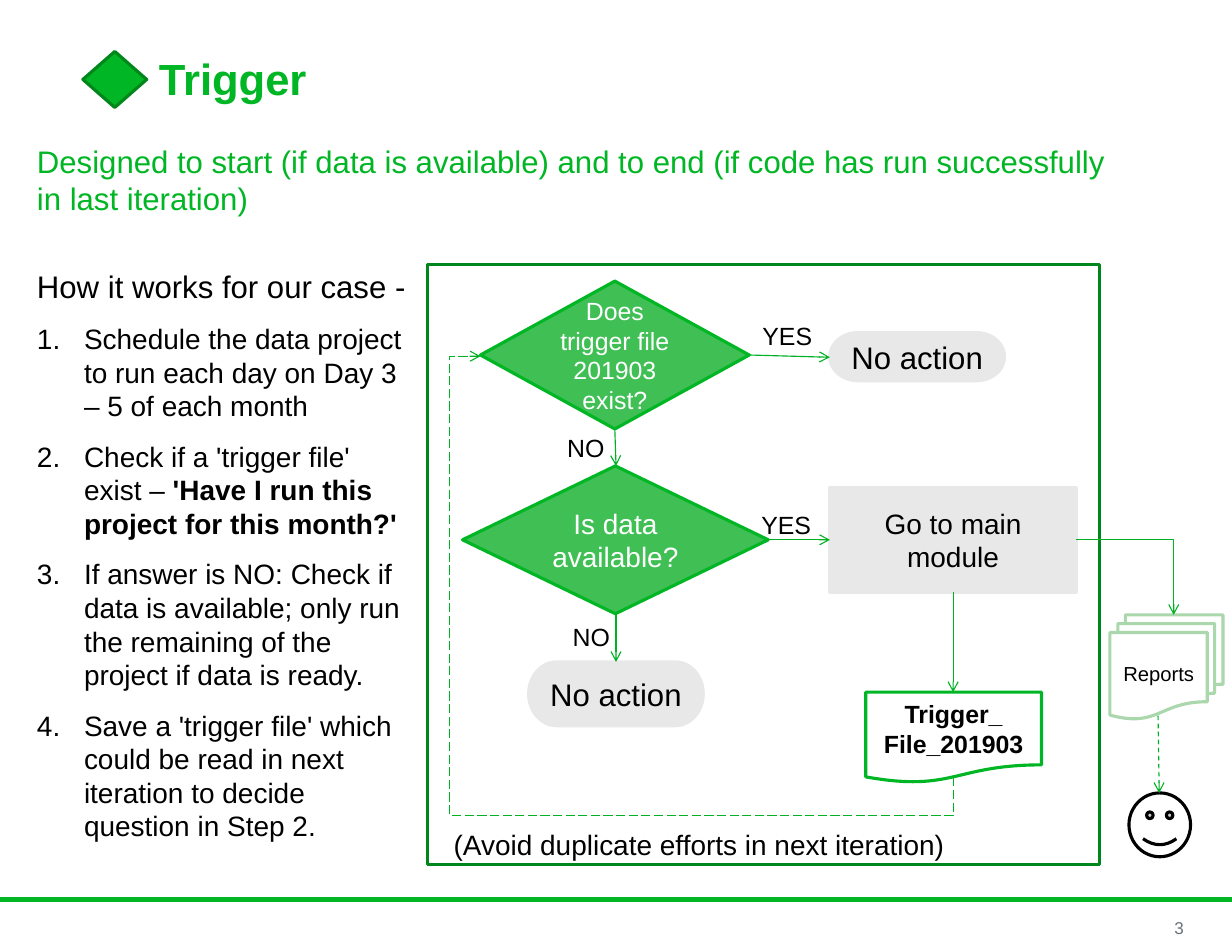
from lxml.etree import SubElement
from pptx import Presentation
from pptx.dml.color import RGBColor
from pptx.enum.dml import MSO_LINE_DASH_STYLE as Dash
from pptx.enum.shapes import MSO_CONNECTOR_TYPE as Link, MSO_SHAPE as Shape
from pptx.enum.text import MSO_ANCHOR as Anchor, PP_ALIGN as Align
from pptx.oxml.ns import qn
from pptx.util import Inches, Pt

GREEN, DARK_GREEN, PALE_GREEN = "00B624", "00871B", "AAD7AC"
ARROW_GREEN, DIAMOND_GREEN = "00B223", "3FBF54"
GREY, BLACK, WHITE = "E8E8E8", "000000", "FFFFFF"
STEPS = [
    [("Schedule the data project to run each day on Day 3 – 5 of each month", False)],
    [("Check if a 'trigger file' exist – ", False),
     ("'Have I run this project for this month?'", True)],
    [("If answer is NO: Check if data is available; only run the remaining "
      "of the project if data is ready.", False)],
    [("Save a 'trigger file' which could be read in next iteration to decide "
      "question in Step 2.", False)],
]


def color(value):
    return RGBColor.from_string(value)


def add_span(para, text, size=18, ink=BLACK, bold=False):
    span = para.add_run()
    span.text = text
    span.font.name = "Arial"
    span.font.size = Pt(size)
    span.font.bold = bold
    span.font.color.rgb = color(ink)


def set_frame(frame, anchor):
    frame.word_wrap = True
    frame.vertical_anchor = anchor
    frame.margin_left = frame.margin_right = Inches(0.11)
    frame.margin_top = frame.margin_bottom = Inches(0.06)


def add_text(page, text, place, align=Align.LEFT, anchor=Anchor.TOP,
             spacing=None, **font):
    box = page.shapes.add_textbox(*map(Inches, place))
    set_frame(box.text_frame, anchor)
    para = box.text_frame.paragraphs[0]
    para.alignment = align
    para.line_spacing = spacing
    add_span(para, text, **font)
    return box


def add_node(page, kind, place, fill, line, text="", **font):
    node = page.shapes.add_shape(kind, *map(Inches, place))
    node.shadow.inherit = False
    if fill:
        node.fill.solid()
        node.fill.fore_color.rgb = color(fill)
    else:
        node.fill.background()
    node.line.color.rgb = color(line)
    node.line.width = Pt(2)
    if text:
        set_frame(node.text_frame, Anchor.MIDDLE)
        para = node.text_frame.paragraphs[0]
        para.alignment = Align.CENTER
        add_span(para, text, **font)


def add_line(page, start, end, ink=ARROW_GREEN, width=0.75, kind=Link.STRAIGHT,
             dash=None, arrow=True):
    line = page.shapes.add_connector(kind, *map(Inches, (*start, *end)))
    line.line.color.rgb = color(ink)
    line.line.width = Pt(width)
    if dash:
        line.line.dash_style = dash
    properties = line._element.spPr
    if arrow:
        SubElement(properties.find(qn("a:ln")), qn("a:tailEnd"), type="arrow")
    SubElement(properties, qn("a:effectLst"))
    return line


def bend(line, preset, rotation=0, **adjustments):
    """Choose the elbow variant, its turn in degrees and its bend positions."""
    properties = line._element.spPr
    properties.find(qn("a:xfrm")).set("rot", str(rotation * 60000))
    geometry = properties.find(qn("a:prstGeom"))
    geometry.set("prst", preset)
    guides = geometry.find(qn("a:avLst"))
    for name, value in adjustments.items():
        SubElement(guides, qn("a:gd"), name=name, fmla=f"val {value}")


def add_steps(page):
    box = add_text(page, "How it works for our case -", (0.22, 2.33, 3.52, 5.3), size=20)
    for step in STEPS:
        para = box.text_frame.add_paragraph()
        indent = Inches(0.42)
        properties = para._p.get_or_add_pPr()
        properties.set("marL", str(indent))
        properties.set("indent", str(-indent))
        SubElement(properties, qn("a:buFont"), typeface="+mj-lt")
        SubElement(properties, qn("a:buAutoNum"), type="arabicPeriod")
        para.space_before = Pt(10.8)
        for text, bold in step:
            add_span(para, text, bold=bold)


def add_flow(page):
    add_node(page, Shape.FLOWCHART_DECISION, (4.29, 2.51, 2.4, 1.32), DIAMOND_GREEN,
             GREEN, "Does trigger file 201903 exist?", size=16, ink=WHITE)
    add_node(page, Shape.FLOWCHART_DECISION, (4.13, 4.16, 2.73, 1.32), DIAMOND_GREEN,
             GREEN, "Is data available?", ink=WHITE)
    for place in ((7.41, 2.97, 1.56, 0.43), (4.72, 5.91, 1.56, 0.57)):
        add_node(page, Shape.FLOWCHART_TERMINATOR, place, GREY, GREY, "No action", size=20)
    add_node(page, Shape.FLOWCHART_PROCESS, (7.41, 4.35, 2.2, 0.94), GREY, GREY,
             "Go to main module")
    add_node(page, Shape.SMILEY_FACE, (10.08, 7.08, 0.55, 0.57), WHITE, BLACK)
    add_line(page, (10.34, 6.39), (10.35, 7.08), dash=Dash.DASH)
    add_node(page, Shape.FLOWCHART_MULTIDOCUMENT, (9.91, 5.49, 1.01, 0.93), WHITE,
             PALE_GREEN, "Reports", size=13)
    add_node(page, Shape.FLOWCHART_DOCUMENT, (7.73, 6.18, 1.57, 0.81), WHITE, GREEN,
             "Trigger_ File_201903", size=16, bold=True)

    for start, end in (((6.69, 3.17), (7.41, 3.19)), ((5.49, 3.84), (5.5, 4.16)),
                       ((5.5, 5.48), (5.5, 5.91)), ((6.87, 4.82), (7.41, 4.82)),
                       ((8.51, 5.29), (8.51, 6.18))):
        add_line(page, start, end)
    for text, left, top, width in (("YES", 6.56, 2.8, 0.94), ("NO", 4.84, 3.8, 0.78),
                                   ("NO", 4.89, 5.49, 0.78), ("YES", 6.58, 4.49, 0.88)):
        add_text(page, text, (left, top, width, 0.38), align=Align.CENTER, size=16)

    # The quarter turn brings these ends to the trigger file and the first question.
    loop = add_line(page, (8.28, 2.95), (4.52, 7.17), kind=Link.ELBOW, dash=Dash.LONG_DASH)
    bend(loop, "bentConnector4", rotation=90, adj1=-9000, adj2=106500)
    add_text(page, "(Avoid duplicate efforts in next iteration)", (3.94, 7.33, 4.94, 0.42))
    add_node(page, Shape.RECTANGLE, (3.82, 2.36, 6, 5.36), None, DARK_GREEN)
    to_reports = add_line(page, (9.61, 4.82), (10.48, 5.49), kind=Link.ELBOW)
    bend(to_reports, "bentConnector2")


def main():
    deck = Presentation()
    deck.slide_width, deck.slide_height = Inches(11), Inches(8.5)
    page = deck.slides.add_slide(deck.slide_layouts[6])
    add_line(page, (0, 8.03), (11, 8.03), ink=GREEN, width=3.5, arrow=False)
    add_text(page, "Trigger", (1.31, 0.48, 8.44, 0.97), spacing=0.85,
             size=28, ink=GREEN, bold=True)
    add_node(page, Shape.FLOWCHART_DECISION, (0.74, 0.46, 0.57, 0.5), GREEN, DARK_GREEN)
    add_text(page, "Designed to start (if data is available) and to end "
             "(if code has run successfully in last iteration)",
             (0.22, 1.21, 9.94, 0.79), size=20, ink=GREEN)
    add_steps(page)
    add_flow(page)
    add_text(page, "3", (9.9, 8.15, 0.78, 0.26), align=Align.RIGHT,
             anchor=Anchor.MIDDLE, size=11, ink="6A737B")
    deck.save("out.pptx")


if __name__ == "__main__":
    main()
